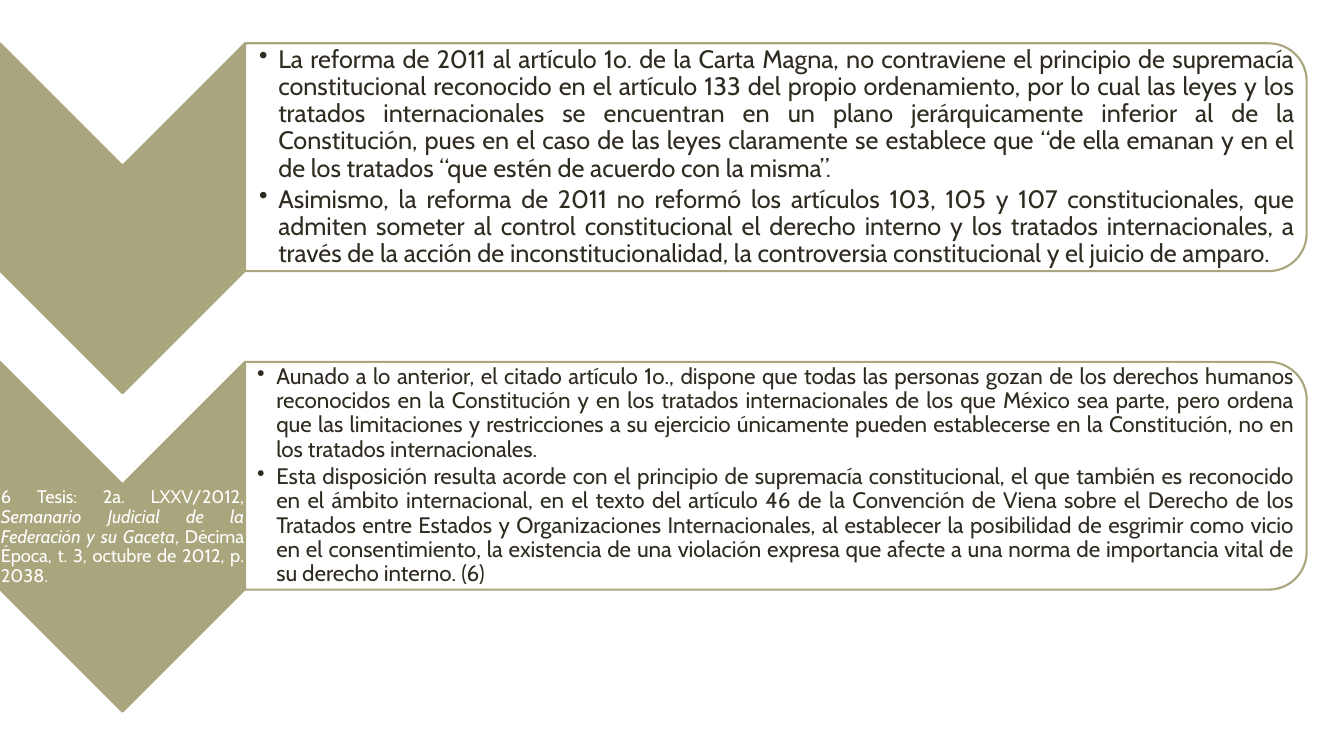
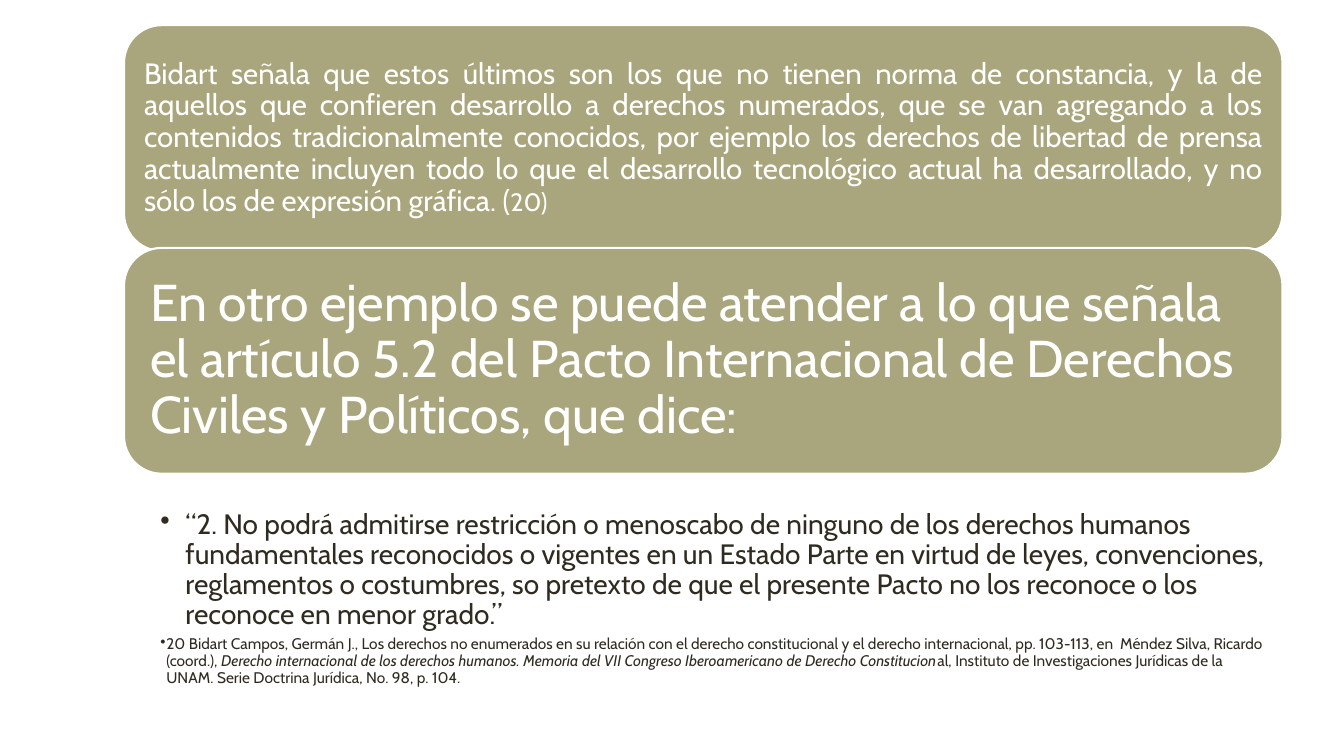
from pptx import Presentation
from pptx.dml.color import RGBColor
from pptx.enum import shapes, text
from pptx.oxml.ns import qn
from pptx.util import Inches, Pt
from lxml import etree


class Theme:
    font = "Cabin"
    olive = RGBColor.from_string("A9A57C")
    ink = RGBColor.from_string("2F2B20")
    white = RGBColor.from_string("FFFFFF")
    note, cite, mid, body, quote, lead, head = 11, 13, 16, 18, 20, 21, 37
    line = Pt(1.5)
    pitch = 0.9


def draw(slide, kind, at, fill, edge, turn=0):
    """Add a preset shape with the shared line width."""
    item = slide.shapes.add_shape(kind, *map(Inches, at))
    item.shadow.inherit = False
    item.rotation = turn
    item.fill.solid()
    item.fill.fore_color.rgb = fill
    item.line.color.rgb = edge
    item.line.width = Theme.line
    return item


def write(frame, paras, color, pads, gap, align, anchor=text.MSO_ANCHOR.MIDDLE):
    """Fill a frame; paras hold (hanging indent, [(words, size, italic)])."""
    frame.word_wrap = True
    frame.vertical_anchor = anchor
    left, top, right, low = map(Inches, pads)
    frame.margin_left, frame.margin_top = left, top
    frame.margin_right, frame.margin_bottom = right, low
    for num, (hang, runs) in enumerate(paras):
        para = frame.add_paragraph() if num else frame.paragraphs[0]
        para.alignment = align
        para.line_spacing = Theme.pitch
        para.space_after = Pt(round(runs[0][1] * gap, 1))
        if hang:
            props = para._p.get_or_add_pPr()
            props.set("marL", str(Inches(hang)))
            props.set("indent", str(-Inches(hang)))
            etree.SubElement(props, qn("a:buChar")).set("char", "•")
        for words, size, slant in runs:
            run = para.add_run()
            run.text = words
            run.font.name = Theme.font
            run.font.size = Pt(size)
            run.font.italic = slant
            run.font.color.rgb = color


kinds = shapes.MSO_SHAPE
aligns = text.PP_ALIGN

deck = Presentation()
deck.slide_width, deck.slide_height = Inches(13.33), Inches(7.5)
blank = deck.slide_layouts[6]

# Slide 1: chevrons with bulleted panels
slide = deck.slides.add_slide(blank)
wide, tall = 2.43, 3.47  # chevron as seen after the quarter turn
long, deep = 10.53, 2.26  # panel as seen after the quarter turn
rows = [
    (Theme.body, 0.14, [
        "La reforma de 2011 al artículo 1o. de la Carta Magna, no contraviene el principio de supremacía constitucional reconocido en el artículo 133 del propio ordenamiento, por lo cual las leyes y los tratados internacionales se encuentran en un plano jerárquicamente inferior al de la Constitución, pues en el caso de las leyes claramente se establece que “de ella emanan y en el de los tratados “que estén de acuerdo con la misma”.",
        "Asimismo, la reforma de 2011 no reformó los artículos 103, 105 y 107 constitucionales, que admiten someter al control constitucional el derecho interno y los tratados internacionales, a través de la acción de inconstitucionalidad, la controversia constitucional y el juicio de amparo.",
    ]),
    (Theme.mid, 0.12, [
        "Aunado a lo anterior, el citado artículo 1o., dispone que todas las personas gozan de los derechos humanos reconocidos en la Constitución y en los tratados internacionales de los que México sea parte, pero ordena que las limitaciones y restricciones a su ejercicio únicamente pueden establecerse en la Constitución, no en los tratados internacionales.",
        "Esta disposición resulta acorde con el principio de supremacía constitucional, el que también es reconocido en el ámbito internacional, en el texto del artículo 46 de la Convención de Viena sobre el Derecho de los Tratados entre Estados y Organizaciones Internacionales, al establecer la posibilidad de esgrimir como vicio en el consentimiento, la existencia de una violación expresa que afecte a una norma de importancia vital de su derecho interno. (6)",
    ]),
]
for num, (size, pad, points) in enumerate(rows):
    top = 0.43 + num * 3.16
    # A turned shape is placed by its unturned box, about the same centre
    skew = (tall - wide) / 2
    draw(slide, kinds.CHEVRON, (-skew, top + skew, tall, wide),
         Theme.olive, Theme.olive, 90)
    skew = (long - deep) / 2
    draw(slide, kinds.ROUND_2_SAME_RECTANGLE,
         (wide + skew, top - skew, deep, long), Theme.white, Theme.olive, 90)
    box = slide.shapes.add_textbox(
        Inches(wide), Inches(top + 0.11), Inches(10.42), Inches(2.04))
    write(box.text_frame, [(0.19, [(point, size, False)]) for point in points],
          Theme.ink, (pad, 0.01, 0.01, 0.01), 0.15, aligns.JUSTIFY)

# Source note on the second chevron
box = slide.shapes.add_textbox(Inches(0), Inches(4.81), Inches(wide), Inches(1.04))
write(box.text_frame, [(0, [
    ("6 Tesis: 2a. LXXV/2012, ", Theme.cite, False),
    ("Semanario Judicial de la Federación y su Gaceta", Theme.cite, True),
    (", Décima Época, t. 3, octubre de 2012, p. 2038.", Theme.cite, False),
])], Theme.white, [0.01] * 4, 0.35, aligns.JUSTIFY)

# Slide 2: two stacked cards
slide = deck.slides.add_slide(blank)
left, width = 1.23, 11.49
cards = [
    (0.09, aligns.JUSTIFY, [
        ("Bidart señala que estos últimos son los que no tienen norma de constancia, y la de aquellos que confieren desarrollo a derechos numerados, que se van agregando a los contenidos tradicionalmente conocidos, por ejemplo los derechos de libertad de prensa actualmente incluyen todo lo que el desarrollo tecnológico actual ha desarrollado, y no sólo los de expresión gráfica. (", Theme.lead, False),
        ("20)", Theme.body, False),
    ]),
    (0.15, aligns.LEFT, [
        ("En otro ejemplo se puede atender a lo que señala el artículo 5.2 del Pacto Internacional de Derechos Civiles y Políticos, que dice:", Theme.head, False),
    ]),
]
for num, (pad, align, runs) in enumerate(cards):
    card = draw(slide, kinds.ROUNDED_RECTANGLE,
                (left, 0.25 + num * 2.21, width, 2.24), Theme.olive, Theme.white)
    write(card.text_frame, [(0, runs)], Theme.white, [pad] * 4, 0.35, align)

# Quotation and its source
box = slide.shapes.add_textbox(Inches(left), Inches(5.03), Inches(width), Inches(1.88))
write(box.text_frame, [
    (0.25, [
        ("“2. No podrá admitirse restricción o menoscabo de ninguno de los derechos humanos fundamentales reconocidos o vigentes en un Estado Parte en virtud de leyes, convenciones, reglamentos o costumbres, so pretexto de que el presente Pacto no los reconoce o los reconoce en menor grado.”", Theme.quote, False),
    ]),
    (0.06, [
        ("20 Bidart Campos, Germán J., Los derechos no enumerados en su relación con el derecho constitucional y el derecho internacional, pp. 103-113, en  Méndez Silva, Ricardo (coord.), ", Theme.note, False),
        ("Derecho internacional de los derechos humanos. Memoria del VII Congreso Iberoamericano de Derecho Constitucion", Theme.note, True),
        ("al, Instituto de Investigaciones Jurídicas de la UNAM. Serie Doctrina Jurídica, No. 98, p. 104.", Theme.note, False),
    ]),
], Theme.ink, (0.36, 0.03, 0.16, 0.03), 0.2, aligns.LEFT, text.MSO_ANCHOR.TOP)

deck.save("out.pptx")
